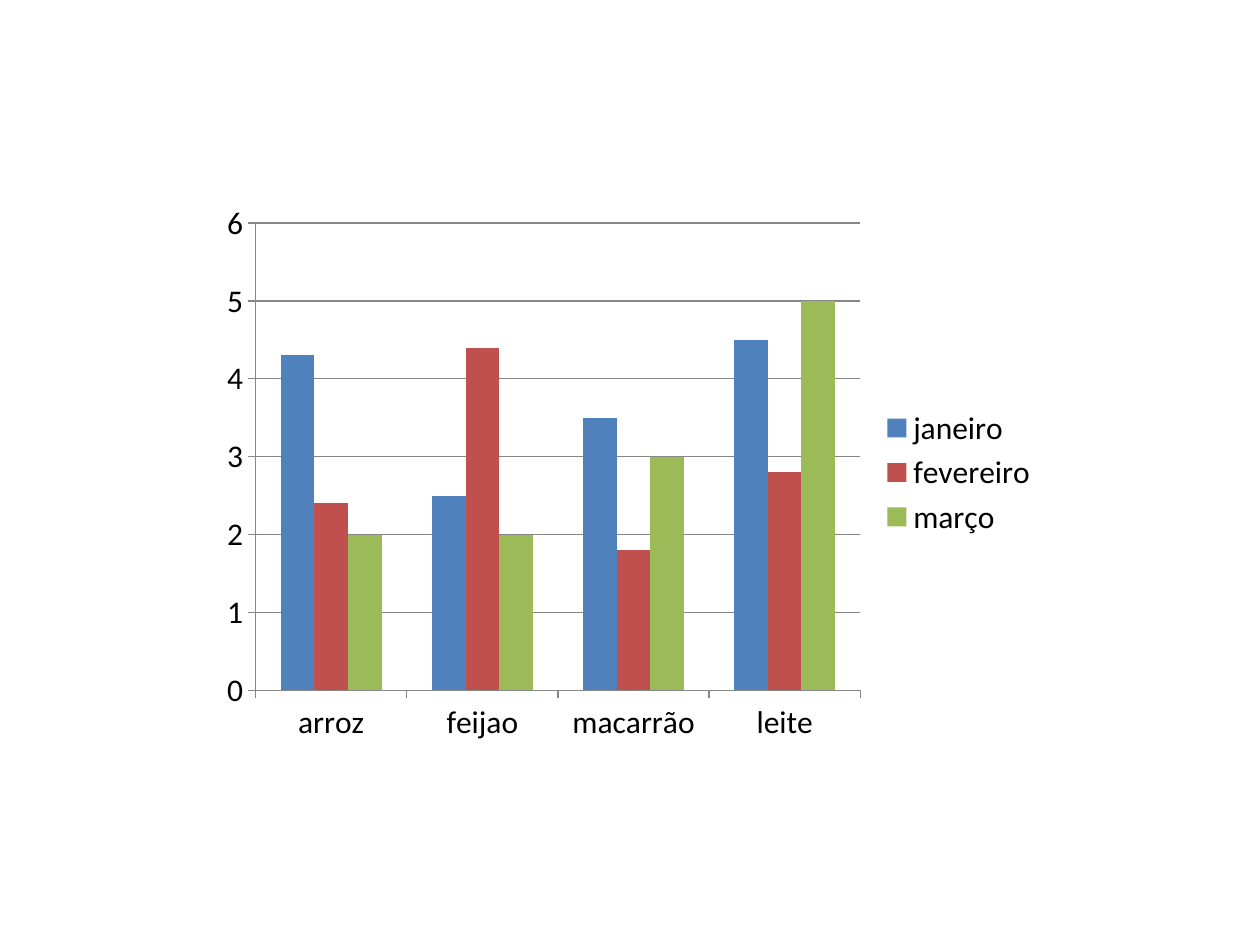
from pptx import Presentation
from pptx.chart import data
from pptx.dml import color
from pptx.enum import chart as kinds
from pptx.util import Inches, Pt

COLORS = {
    "text": "000000",
    "line": "878787",
    "janeiro": "4F81BD",
    "fevereiro": "C0504D",
    "março": "9BBB59",
}
PRODUCTS = ["arroz", "feijao", "macarrão", "leite"]
MONTHLY_PRICES = {
    "janeiro": (4.3, 2.5, 3.5, 4.5),
    "fevereiro": (2.4, 4.4, 1.8, 2.8),
    "março": (2, 2, 3, 5),
}


def apply(target, values):
    for name, value in values.items():
        setattr(target, name, value)


class SlideBuilder:
    def __init__(self, presentation):
        self.slide = presentation.slides.add_slide(presentation.slide_layouts[6])
        self.font = {"name": "Calibri", "size": Pt(18)}

    def rgb(self, name):
        return color.RGBColor.from_string(COLORS[name])

    def style_line(self, line):
        line.color.rgb = self.rgb("line")
        line.width = Pt(0.75)

    def style_axis(self, axis, values):
        apply(axis, {"major_tick_mark": kinds.XL_TICK_MARK.OUTSIDE, **values})
        self.style_line(axis.format.line)

    def column_chart(self, left, top, width, height, categories, series):
        chart_data = data.CategoryChartData()
        chart_data.categories = categories
        for name, values in series.items():
            chart_data.add_series(name, values)
        chart = self.slide.shapes.add_chart(
            kinds.XL_CHART_TYPE.COLUMN_CLUSTERED,
            Inches(left), Inches(top), Inches(width), Inches(height),
            chart_data,
        ).chart
        apply(chart, {"has_title": False, "has_legend": True})
        apply(chart.font, self.font)
        chart.font.color.rgb = self.rgb("text")
        apply(chart.legend, {
            "position": kinds.XL_LEGEND_POSITION.RIGHT,
            "include_in_layout": False,
        })
        self.style_axis(chart.category_axis, {"has_major_gridlines": False})
        self.style_axis(chart.value_axis, {
            "has_major_gridlines": True,
            "minimum_scale": 0,
            "maximum_scale": 6,
            "major_unit": 1,
        })
        self.style_line(chart.value_axis.major_gridlines.format.line)
        plot = chart.plots[0]
        apply(plot, {"vary_by_categories": False, "gap_width": 150, "overlap": 0})
        for column in plot.series:
            column.format.fill.solid()
            column.format.fill.fore_color.rgb = self.rgb(column.name)


def main():
    presentation = Presentation()
    apply(presentation, {"slide_width": Inches(10), "slide_height": Inches(7.5)})
    builder = SlideBuilder(presentation)
    builder.column_chart(1.67, 1.53, 6.67, 4.44, PRODUCTS, MONTHLY_PRICES)
    presentation.save("out.pptx")


if __name__ == "__main__":
    main()
